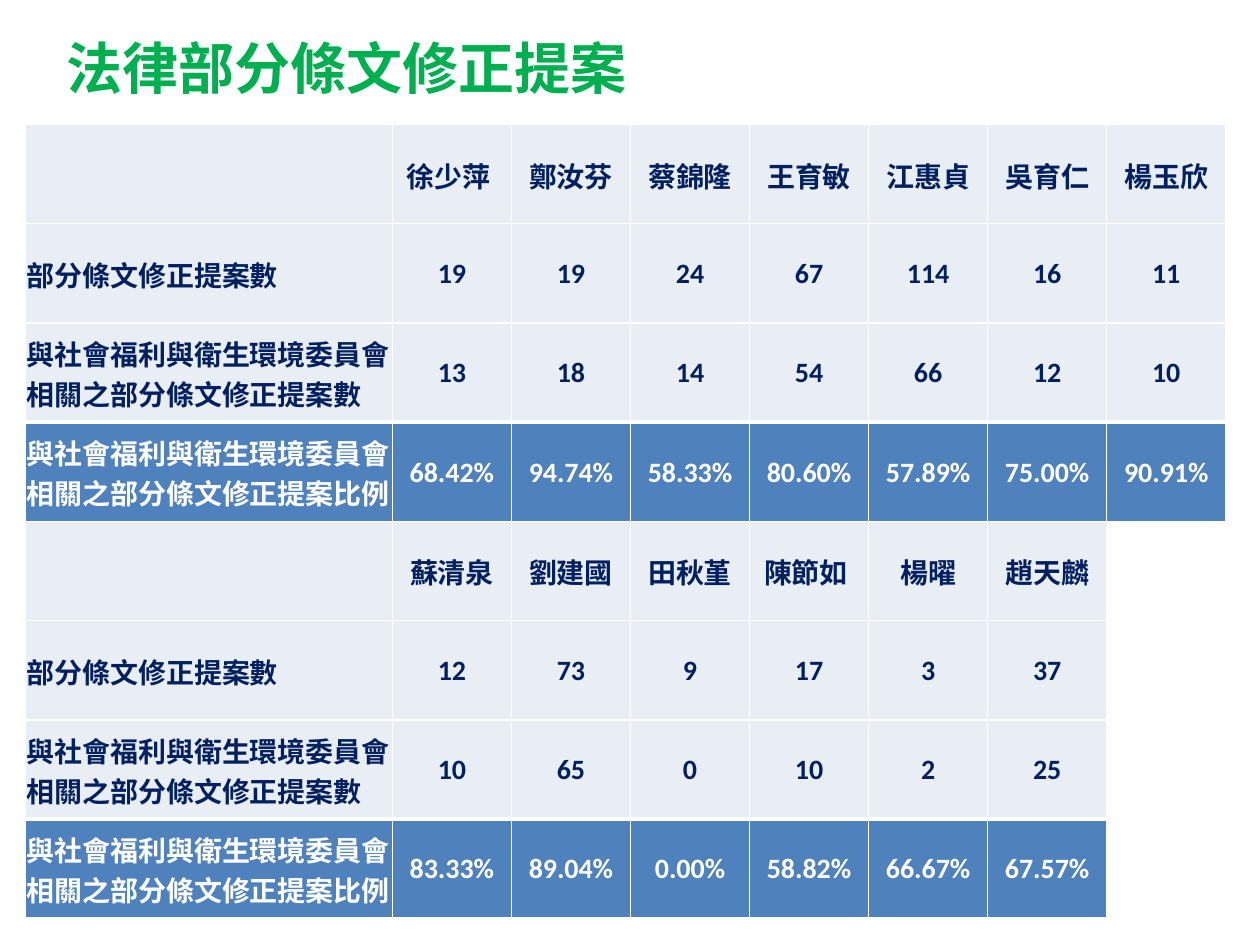
from dataclasses import dataclass

from lxml import etree
from pptx import Presentation
from pptx.dml.color import RGBColor
from pptx.enum.text import MSO_ANCHOR, MSO_AUTO_SIZE, PP_ALIGN
from pptx.oxml.ns import qn
from pptx.slide import Slide
from pptx.table import _Cell
from pptx.text.text import _Paragraph
from pptx.util import Cm, Pt

LEFT, CENTER = PP_ALIGN.LEFT, PP_ALIGN.CENTER
MIDDLE = MSO_ANCHOR.MIDDLE
FIT_SHAPE = MSO_AUTO_SIZE.SHAPE_TO_FIT_TEXT
TITLE_ONLY = 5


@dataclass(frozen=True)
class Theme:
    title_color: str = "00B050"
    ink: str = "002060"
    white: str = "FFFFFF"
    pale: str = "E9EDF4"
    accent: str = "4F81BD"
    title_size: int = 32
    table_size: int = 16
    latin_font: str = "Calibri"
    cjk_font: str = "Noto Sans CJK SC"
    thin_rule: int = 1
    thick_rule: int = 3


@dataclass(frozen=True)
class Legislator:
    name: str
    proposals: int
    related: int

    @property
    def ratio(self) -> str:
        return f"{self.related / self.proposals:.2%}"


THEME = Theme()
TABLE_LEFT, TABLE_TOP = 0.51, 2.51
LABEL_WIDTH, VALUE_WIDTH, ROW_HEIGHT = 7.4, 2.4, 2.0
CELL_INSET = 0.03

ROW_LABELS = (
    "",
    "部分條文修正提案數",
    "與社會福利與衛生環境委員會相關之部分條文修正提案數",
    "與社會福利與衛生環境委員會相關之部分條文修正提案比例",
)
GROUPS = (
    (
        Legislator("徐少萍 ", 19, 13),
        Legislator("鄭汝芬", 19, 18),
        Legislator("蔡錦隆", 24, 14),
        Legislator("王育敏", 67, 54),
        Legislator("江惠貞", 114, 66),
        Legislator("吳育仁", 16, 12),
        Legislator("楊玉欣", 11, 10),
    ),
    (
        Legislator("蘇清泉", 12, 10),
        Legislator("劉建國", 73, 65),
        Legislator("田秋堇", 9, 0),
        Legislator("陳節如 ", 17, 10),
        Legislator("楊曜", 3, 2),
        Legislator("趙天麟", 37, 25),
    ),
)


def add_bold_run(paragraph: _Paragraph, text: str, size: int, color: str, latin: str) -> None:
    run = paragraph.add_run()
    run.text = text
    font = run.font
    font.size = Pt(size)
    font.bold = True
    font.name = latin
    font.color.rgb = RGBColor.from_string(color)
    east_asian = etree.SubElement(font._element, qn("a:ea"))
    east_asian.set("typeface", THEME.cjk_font)


def add_title(slide: Slide, text: str) -> None:
    title = slide.shapes.title
    title.left, title.top, title.width, title.height = Cm(1.09), Cm(0.53), Cm(11.91), Cm(1.63)
    frame = title.text_frame
    frame.word_wrap = False
    frame.auto_size = FIT_SHAPE
    frame.vertical_anchor = MIDDLE
    paragraph = frame.paragraphs[0]
    paragraph.alignment = LEFT
    add_bold_run(paragraph, text, THEME.title_size, THEME.title_color, THEME.cjk_font)


def set_borders(cell: _Cell, top_width: int) -> None:
    properties = cell._tc.get_or_add_tcPr()
    thin = THEME.thin_rule
    for side, width in (("L", thin), ("R", thin), ("T", top_width), ("B", thin)):
        line = etree.SubElement(properties, qn(f"a:ln{side}"), w=str(Pt(width)))
        fill = etree.SubElement(line, qn("a:solidFill"))
        etree.SubElement(fill, qn("a:srgbClr"), val=THEME.white)


def fill_cell(cell: _Cell, text: str, alignment: PP_ALIGN, is_ratio: bool) -> None:
    set_borders(cell, THEME.thick_rule if is_ratio else THEME.thin_rule)
    cell.fill.solid()
    cell.fill.fore_color.rgb = RGBColor.from_string(THEME.accent if is_ratio else THEME.pale)
    cell.margin_left = cell.margin_right = cell.margin_top = Cm(CELL_INSET)
    cell.margin_bottom = 0
    cell.vertical_anchor = MIDDLE
    if text:
        paragraph = cell.text_frame.paragraphs[0]
        paragraph.alignment = alignment
        color = THEME.white if is_ratio else THEME.ink
        add_bold_run(paragraph, text, THEME.table_size, color, THEME.latin_font)


def add_proposal_table(slide: Slide, top: float, legislators: tuple[Legislator, ...]) -> None:
    columns = [ROW_LABELS] + [
        (member.name, str(member.proposals), str(member.related), member.ratio)
        for member in legislators
    ]
    widths = [LABEL_WIDTH] + [VALUE_WIDTH] * len(legislators)
    table = slide.shapes.add_table(
        len(ROW_LABELS), len(columns),
        Cm(TABLE_LEFT), Cm(top), Cm(sum(widths)), Cm(ROW_HEIGHT * len(ROW_LABELS)),
    ).table
    table.first_row = table.horz_banding = False
    for row in table.rows:
        row.height = Cm(ROW_HEIGHT)
    for column_index, (entries, width) in enumerate(zip(columns, widths)):
        table.columns[column_index].width = Cm(width)
        alignment = CENTER if column_index else LEFT
        for row_index, entry in enumerate(entries):
            is_ratio = row_index == len(ROW_LABELS) - 1
            fill_cell(table.cell(row_index, column_index), entry, alignment, is_ratio)


def main() -> None:
    presentation = Presentation()
    presentation.slide_width, presentation.slide_height = Cm(25.4), Cm(19.05)
    slide = presentation.slides.add_slide(presentation.slide_layouts[TITLE_ONLY])
    add_title(slide, "法律部分條文修正提案")
    for group_index, legislators in enumerate(GROUPS):
        top = TABLE_TOP + group_index * ROW_HEIGHT * len(ROW_LABELS)
        add_proposal_table(slide, top, legislators)
    presentation.save("out.pptx")


if __name__ == "__main__":
    main()
